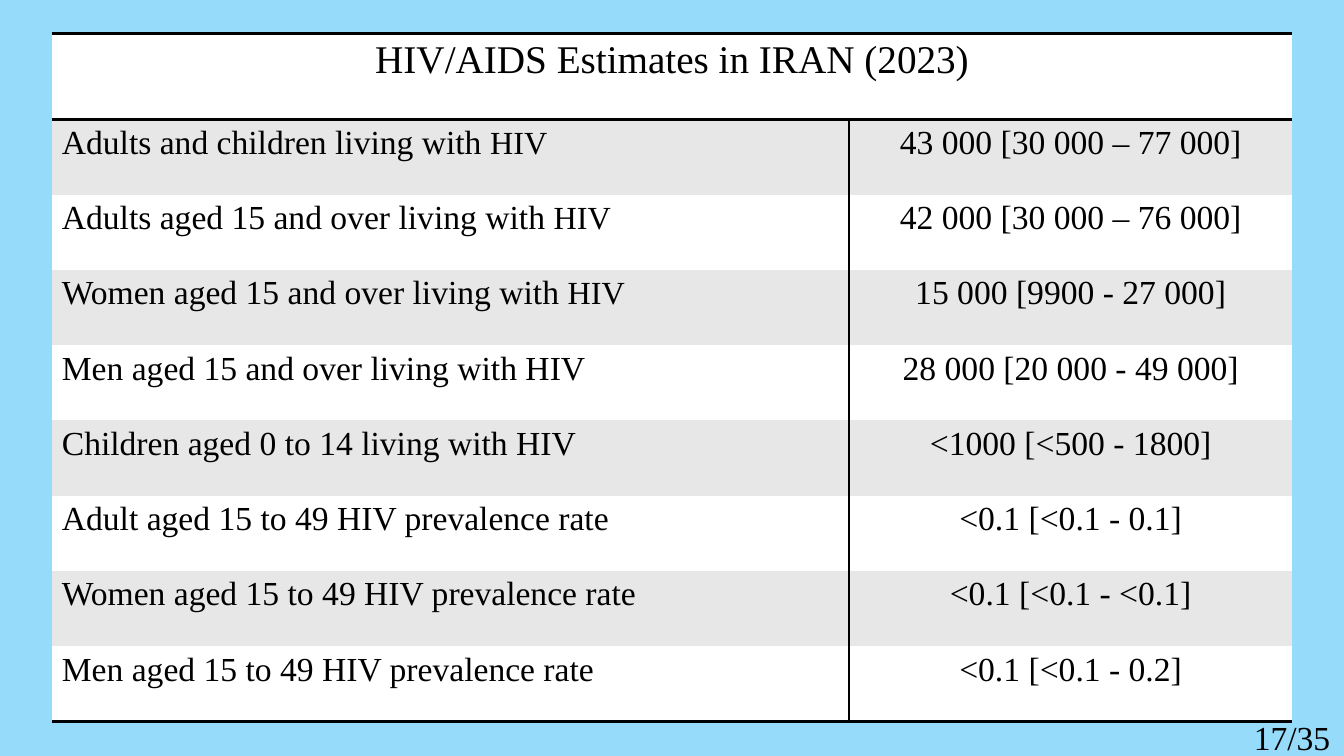
from lxml.etree import SubElement
from pptx import Presentation
from pptx.dml.color import RGBColor as RGB
from pptx.enum.text import MSO_AUTO_SIZE as Fit, PP_ALIGN as Align
from pptx.oxml import parse_xml
from pptx.oxml.ns import nsdecls, qn
from pptx.util import Pt

SKY = RGB(0x97, 0xDB, 0xFB)
BLACK = RGB(0, 0, 0)
WHITE = RGB(255, 255, 255)
GRAY = RGB(0xE7, 0xE7, 0xE7)
NO_STYLE = "{2D5ABB26-0587-4C30-8999-92F81FD0307C}"

TITLE = "HIV/AIDS Estimates in IRAN (2023)"
DATA = [
    ("Adults and children living with |HIV", "43 000 [30 000 – 77 000]"),
    ("Adults aged 15 and over living with |HIV", "42 000 [30 000 – 76 000]"),
    ("Women aged 15 and over living with |HIV", "15 000 [9900 - 27 000]"),
    ("Men aged 15 and over living with HIV", "28 000 [20 000 - 49 000]"),
    ("Children aged 0 to 14 living with HIV", "<1000 [<500 - 1800]"),
    ("Adult aged 15 to 49 HIV prevalence rate", "<0.1 [<0.1 - 0.1]"),
    ("Women aged 15 to 49 HIV prevalence rate", "<0.1 [<0.1 - <0.1]"),
    ("Men aged 15 to 49 HIV prevalence rate", "<0.1 [<0.1 - 0.2]"),
]


def write(frame, text, size=24, align=Align.LEFT, font="Times New Roman", color=BLACK):
    """Fill the frame; the part after a bar is one point smaller."""
    para = frame.paragraphs[0]
    para.alignment = align
    for step, part in enumerate(text.split("|")):
        run = para.add_run()
        run.text = part
        run.font.name = font
        run.font.size = Pt(size - step)
        run.font.color.rgb = color


def edge(cell, **widths):
    """Draw cell borders; keys are L, R, T, B and values are points."""
    props = cell._tc.get_or_add_tcPr()
    sides = [side for side in "LRTB" if side in widths]
    for spot, side in enumerate(sides):
        line = parse_xml(f'<a:ln{side} {nsdecls("a")} w="{Pt(widths[side])}"/>')
        fill = SubElement(line, qn("a:solidFill"))
        SubElement(fill, qn("a:srgbClr"), val=str(BLACK))
        props.insert(spot, line)


class Deck:
    """Holds the file and the current slide."""

    def __init__(self):
        self.file = Presentation()
        self.file.slide_width, self.file.slide_height = Pt(960), Pt(540)
        self.slide = self.file.slides.add_slide(self.file.slide_layouts[6])
        back = self.slide.background.fill
        back.solid()
        back.fore_color.rgb = SKY

    def cell(self, grid, row, col, text, fill, **form):
        cell = grid.cell(row, col)
        cell.fill.solid()
        cell.fill.fore_color.rgb = fill
        write(cell.text_frame, text, **form)
        return cell

    def table(self, title, data, left, top, widths, head, high):
        count = len(data)
        box = self.slide.shapes.add_table(
            count + 1, 2, Pt(left), Pt(top), Pt(sum(widths)), Pt(head + high * count))
        grid = box.table
        grid.first_row = grid.horz_banding = False
        grid._tbl.tblPr.find(qn("a:tableStyleId")).text = NO_STYLE
        for col, width in zip(grid.columns, widths):
            col.width = Pt(width)
        for row in grid.rows:
            row.height = Pt(high)
        grid.rows[0].height = Pt(head)

        grid.cell(0, 0).merge(grid.cell(0, 1))
        self.cell(grid, 0, 0, title, WHITE, size=28, align=Align.CENTER)
        for col in range(2):
            edge(grid.cell(0, col), T=2, B=2)
        for row, (label, value) in enumerate(data, 1):
            fill = GRAY if row % 2 else WHITE
            base = {"B": 2} if row == count else {}
            edge(self.cell(grid, row, 0, label, fill), R=1, **base)
            edge(self.cell(grid, row, 1, value, fill, align=Align.CENTER), L=1, **base)

    def text(self, text, left, top, width, height, **form):
        box = self.slide.shapes.add_textbox(Pt(left), Pt(top), Pt(width), Pt(height))
        frame = box.text_frame
        frame.word_wrap = True
        frame.auto_size = Fit.SHAPE_TO_FIT_TEXT
        write(frame, text, **form)


def main():
    deck = Deck()
    deck.table(TITLE, DATA, 37, 24, (569.5, 316.5), 61.2, 53.8)
    deck.text("17/35", 888.5, 508.3, 69, 36)
    deck.file.save("out.pptx")


if __name__ == "__main__":
    main()
